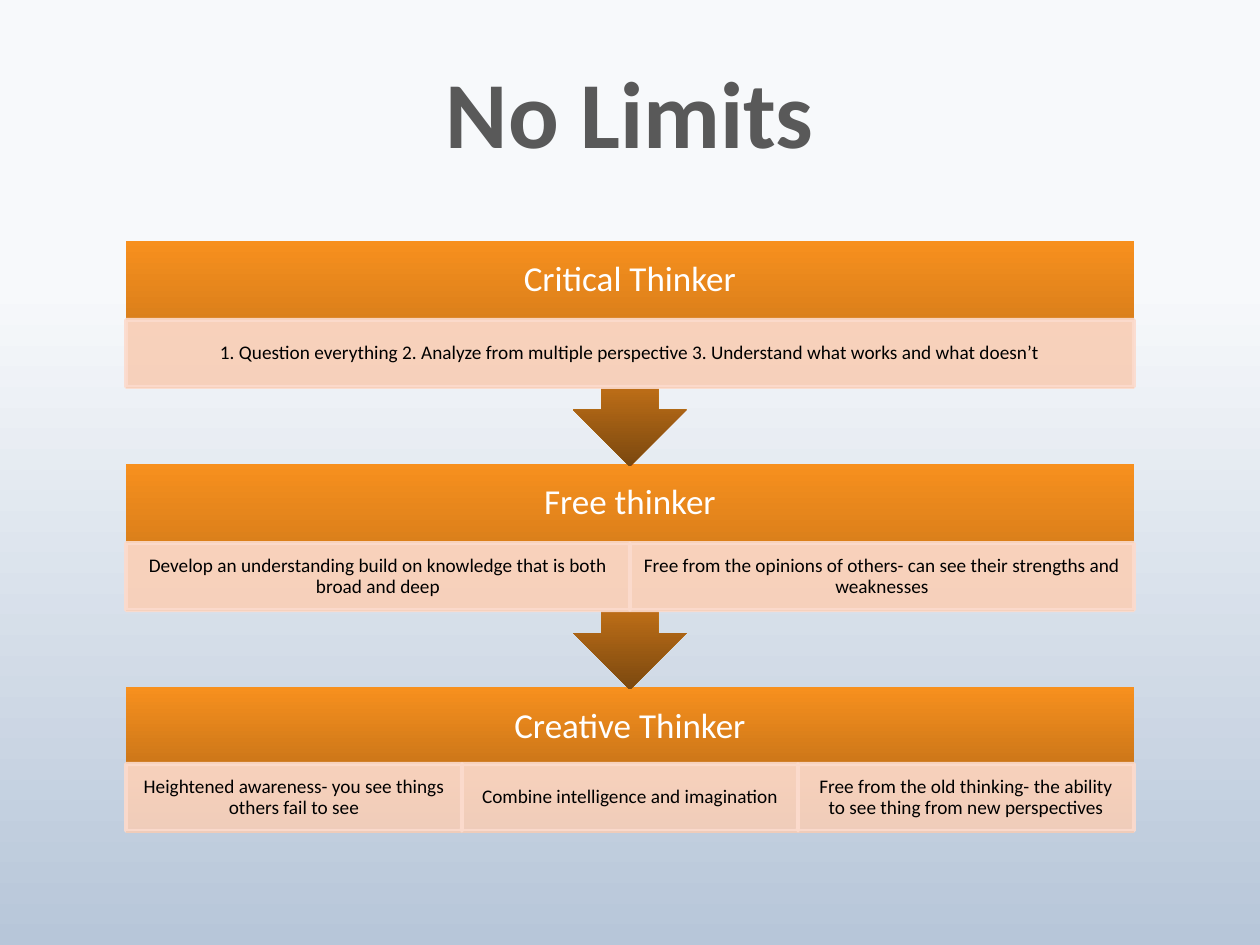
from lxml import etree
from pptx import Presentation
from pptx.dml.color import RGBColor
from pptx.enum.shapes import MSO_SHAPE
from pptx.enum.text import MSO_ANCHOR, PP_ALIGN
from pptx.oxml.ns import qn
from pptx.util import Cm, Pt

RECT = MSO_SHAPE.RECTANGLE
CALLOUT = MSO_SHAPE.DOWN_ARROW_CALLOUT
MIDDLE = MSO_ANCHOR.MIDDLE
CENTER = PP_ALIGN.CENTER

LEFT, WIDTH = 2.54, 20.32
TOP, STEP = 4.85, 4.5
HEAD_H, CELL_H = 1.6, 1.35

STAGES = [
    ("Critical Thinker", [
        "1. Question everything 2. Analyze from multiple perspective "
        "3. Understand what works and what doesn’t"]),
    ("Free thinker", [
        "Develop an understanding build on knowledge that is both broad and deep",
        "Free from the opinions of others- can see their strengths and weaknesses"]),
    ("Creative Thinker", [
        "Heightened awareness- you see things others fail to see",
        "Combine intelligence and imagination",
        "Free from the old thinking- the ability to see thing from new perspectives"]),
]


def color(code):
    return RGBColor.from_string(code)


def blend(fill, root, stops):
    """Give the fill, held in root, a top-to-bottom gradient of (percent, hex) stops."""
    fill.gradient()
    fill.gradient_angle = 270
    ramp = next(root.iter(qn("a:gsLst")))
    for old in list(ramp):
        ramp.remove(old)
    for spot, code in stops:
        stop = etree.SubElement(ramp, qn("a:gs"), pos=str(spot * 1000))
        etree.SubElement(stop, qn("a:srgbClr"), val=code)


class Deck:
    """Holds the style and the current slide."""
    font = "Calibri"
    sky = [(0, "F7F9FB"), (30, "F7F9FB"), (100, "B7C6D9")]
    band = [(0, "F7901E"), (60, "C67318"), (100, "7B480F")]
    ink = [(0, "595959"), (50, "595959"), (100, "262626")]
    pale = "FCDBCD"

    def __init__(self, show):
        self.slide = show.slides.add_slide(show.slide_layouts[6])
        blend(self.slide.background.fill, self.slide.element, self.sky)

    def words(self, shape, text, size, pad, space=0.9, bold=False):
        """Put one centred paragraph in the shape and return its font."""
        frame = shape.text_frame
        side, edge = map(Cm, pad)
        look = {"word_wrap": True, "vertical_anchor": MIDDLE,
                "margin_left": side, "margin_right": side,
                "margin_top": edge, "margin_bottom": edge}
        for name, value in look.items():
            setattr(frame, name, value)
        line = frame.paragraphs[0]
        line.alignment, line.line_spacing = CENTER, space
        run = line.add_run()
        run.text = text
        for name, value in {"name": self.font, "size": Pt(size), "bold": bold}.items():
            setattr(run.font, name, value)
        return run.font

    def label(self, box, text, *style, **more):
        area = self.slide.shapes.add_textbox(*map(Cm, box))
        return area, self.words(area, text, *style, **more)

    def shape(self, kind, box):
        item = self.slide.shapes.add_shape(kind, *map(Cm, box))
        item.shadow.inherit = False
        return item

    def title(self, text):
        area, font = self.label((LEFT, 0.64, WIDTH, 3.5), text, 54, (0.25, 0.13),
                                space=Pt(56), bold=True)
        blend(font.fill, area.element, self.ink)

    def block(self, kind, top, height, text):
        item = self.shape(kind, (LEFT, top, WIDTH, height))
        blend(item.fill, item.element.spPr, self.band)
        item.line.fill.background()
        font = self.label((LEFT, top, WIDTH, HEAD_H), text, 20, (0.4, 0.4))[1]
        font.color.rgb = color("FFFFFF")

    def cell(self, box, text):
        item = self.shape(RECT, box)
        item.fill.solid()
        item.line.width = Pt(2.25)
        for paint in (item.fill.fore_color, item.line.color):
            paint.rgb = color(self.pale)
        for tint in item.element.spPr.iter(qn("a:srgbClr")):
            etree.SubElement(tint, qn("a:alpha"), val="90000")
        self.words(item, text, 11, (0.23, 0.05)).color.rgb = color("000000")


def main():
    show = Presentation()
    show.slide_width, show.slide_height = Cm(25.4), Cm(19.05)
    deck = Deck(show)
    deck.title("No Limits")
    last = len(STAGES) - 1
    for row, (name, notes) in reversed(list(enumerate(STAGES))):
        top = TOP + row * STEP
        kind, height, drop = (RECT, 2.95, 1.55) if row == last else (CALLOUT, 4.55, HEAD_H)
        deck.block(kind, top, height, name)
        wide = WIDTH / len(notes)
        for col, note in enumerate(notes):
            deck.cell((LEFT + col * wide, top + drop, wide, CELL_H), note)
    show.save("out.pptx")


if __name__ == "__main__":
    main()
